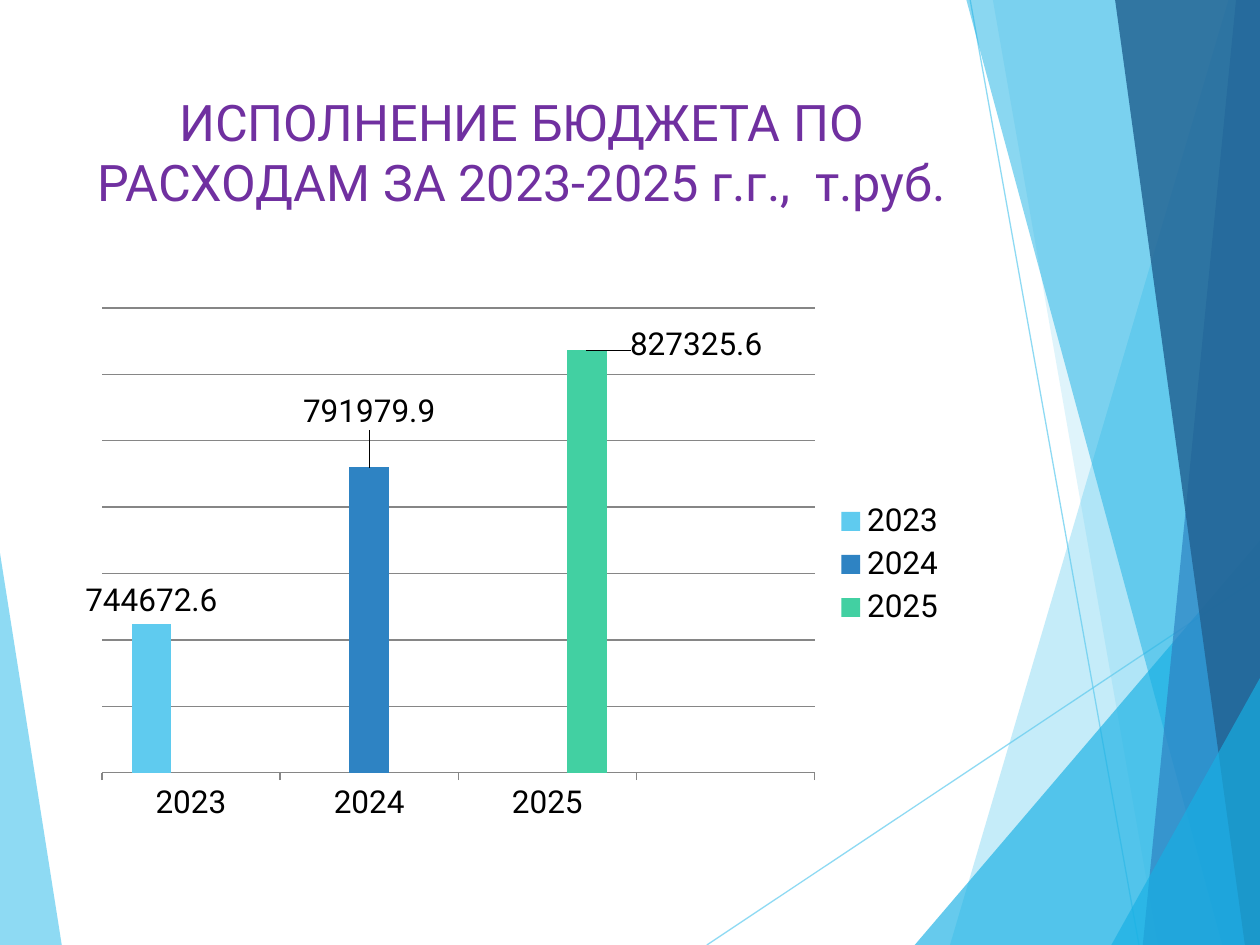
from pptx import Presentation
from pptx.chart.data import CategoryChartData
from pptx.dml.color import RGBColor
from pptx.enum import chart as ch, shapes, text
from pptx.oxml import parse_xml
from pptx.oxml.ns import nsdecls
from pptx.util import Inches, Pt

# Content
FONT = "Roboto"
TITLE = "ИСПОЛНЕНИЕ БЮДЖЕТА ПО РАСХОДАМ ЗА 2023-2025 г.г.,  т.руб."
SPENDING = [  # year, thousand roubles, colour, label shift as a share of the chart
    ("2023", 744672.6, "5FCBEF", None),
    ("2024", 791979.9, "2E83C3", (0, -0.06)),
    ("2025", 827325.6, "42D0A2", (0.125, 0.035)),
]
RAYS = [  # start, end
    ((5.61, 7.5), (10.01, 4.57)),
    ((7.7, 0), (9.04, 7.5)),
]
FACETS = [  # colour, opacity in percent, corners
    ("5FCBEF", 70, [(0, 4.39), (0.49, 7.5), (0, 7.5)]),
    ("5FCBEF", 36, [(9.75, 0), (7.54, 7.5), (10, 7.5), (10, 0)]),
    ("5FCBEF", 20, [(7.88, 0), (9.19, 7.5), (10, 7.5), (10, 0)]),
    ("17B0E4", 66, [(7.26, 7.5), (10, 4.29), (10, 7.5)]),
    ("17B0E4", 50, [(7.67, 0), (9.7, 7.5), (10, 7.5), (10, 0)]),
    ("2E83C3", 70, [(9.81, 0), (9.07, 7.5), (10, 7.5), (10, 0)]),
    ("226292", 82, [(8.85, 0), (9.88, 7.5), (10, 7.5), (10, 0)]),
    ("17B0E4", 66, [(8.82, 7.5), (10, 5.38), (10, 7.5)]),
]


def paint(color, value, opacity=100):
    color.rgb = RGBColor.from_string(value)
    if opacity < 100:
        alpha = parse_xml(f'<a:alpha {nsdecls("a")} val="{opacity * 1000}"/>')
        color._xFill.find(".//{*}srgbClr").append(alpha)


def add_facet(page, color, opacity, corners):
    points = [(Inches(x), Inches(y)) for x, y in corners]
    builder = page.shapes.build_freeform(*points[0])
    builder.add_line_segments(points[1:], close=True)
    facet = builder.convert_to_shape()
    facet.shadow.inherit = False
    facet.fill.solid()
    paint(facet.fill.fore_color, color, opacity)
    facet.line.fill.background()


def add_ray(page, start, end):
    ray = page.shapes.add_connector(
        shapes.MSO_CONNECTOR.STRAIGHT, *map(Inches, start + end))
    ray.line.width = Pt(0.75)
    ray.line.fill.solid()
    paint(ray.line.fill.fore_color, "5FCBEF", 70)
    ray._element.spPr.append(parse_xml(f'<a:effectLst {nsdecls("a")}/>'))


def manual_layout(**values):
    parts = "".join(f'<c:{key} val="{value}"/>' for key, value in values.items())
    return parse_xml(f'<c:layout {nsdecls("c")}><c:manualLayout>{parts}'
                     '</c:manualLayout></c:layout>')


def add_spending_chart(page):
    data = CategoryChartData(number_format="General")
    data.categories = [year for year, *_ in SPENDING] + [""]
    for index, (year, amount, *_) in enumerate(SPENDING):
        data.add_series(year, [amount if i == index else None
                               for i in range(len(SPENDING) + 1)])
    chart = page.shapes.add_chart(
        ch.XL_CHART_TYPE.COLUMN_CLUSTERED, Inches(0.67), Inches(2.36),
        Inches(6.94), Inches(4.24), data).chart
    chart.has_title = False
    chart.font.name, chart.font.size = FONT, Pt(18)
    paint(chart.font.color, "000000")
    chart.has_legend = True
    chart.legend.position = ch.XL_LEGEND_POSITION.RIGHT
    chart.legend.include_in_layout = False

    # Axes
    values, years = chart.value_axis, chart.category_axis
    values.minimum_scale, values.maximum_scale = 700000, 840000
    values.major_unit = 20000
    values.visible = False
    values.has_major_gridlines = True
    years.major_tick_mark = ch.XL_TICK_MARK.OUTSIDE
    for line in (values.major_gridlines.format.line, years.format.line):
        line.width = Pt(0.75)
        paint(line.fill_color if hasattr(line, "fill_color") else line.color, "868686")

    # Columns and their labels
    plot = chart.plots[0]
    plot.vary_by_categories = False
    plot.gap_width, plot.overlap = 150, 0
    for index, (series, (_, _, color, shift)) in enumerate(zip(plot.series, SPENDING)):
        series.format.fill.solid()
        paint(series.format.fill.fore_color, color)
        series.data_labels.show_value = True
        series.data_labels.position = ch.XL_LABEL_POSITION.OUTSIDE_END
        if shift:
            label = series.points[index].data_label
            label.position = ch.XL_LABEL_POSITION.OUTSIDE_END
            series._element.find(".//{*}dLbl/{*}idx").addnext(
                manual_layout(x=shift[0], y=shift[1]))

    # Plot position inside the chart
    area = chart._chartSpace.find(".//{*}plotArea")
    for old in area.findall("{*}layout"):
        area.remove(old)
    area.insert(0, manual_layout(layoutTarget="inner", xMode="edge", yMode="edge",
                                 x=0.02, y=0.02, w=0.815, h=0.87))


def add_title(page):
    title = page.shapes.title
    title.left, title.top = Inches(0.67), Inches(0.67)
    title.width, title.height = Inches(6.94), Inches(1.44)
    frame = title.text_frame
    frame.word_wrap = True
    frame.vertical_anchor = text.MSO_ANCHOR.TOP
    para = frame.paragraphs[0]
    para.alignment = text.PP_ALIGN.CENTER
    span = para.add_run()
    span.text = TITLE
    span.font.name, span.font.size = FONT, Pt(28.8)
    paint(span.font.color, "7030A0")


def main():
    deck = Presentation()
    deck.slide_width, deck.slide_height = Inches(10), Inches(7.5)
    page = deck.slides.add_slide(deck.slide_layouts[5])
    # Background facets, with the rays above the first one
    add_facet(page, *FACETS[0])
    for ray in RAYS:
        add_ray(page, *ray)
    for facet in FACETS[1:]:
        add_facet(page, *facet)
    add_title(page)
    add_spending_chart(page)
    deck.save("out.pptx")


if __name__ == "__main__":
    main()
